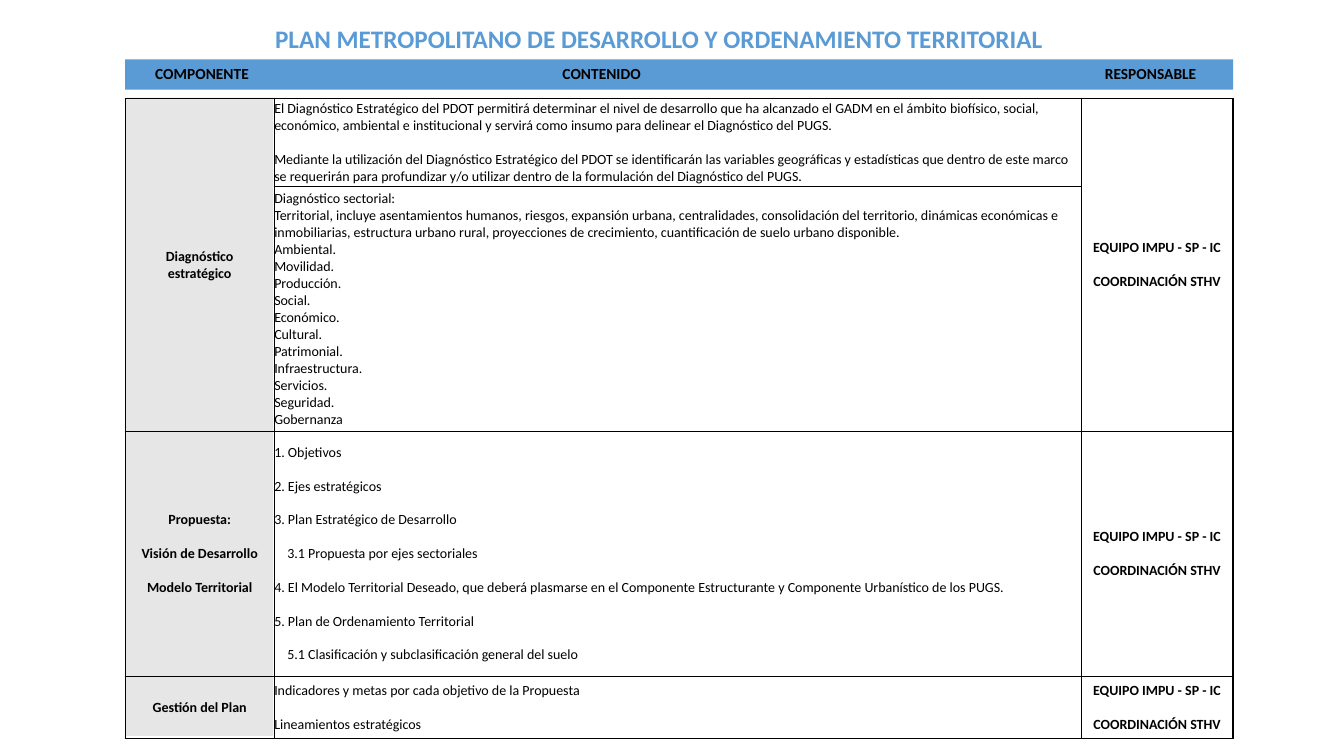
from lxml.etree import SubElement
from pptx import Presentation
from pptx.dml.color import RGBColor
from pptx.enum.shapes import MSO_SHAPE
from pptx.enum.text import MSO_ANCHOR, MSO_AUTO_SIZE, PP_ALIGN
from pptx.oxml.ns import qn
from pptx.util import Inches, Pt

BLUE, GREY, BLACK = "5B9BD5", "E7E6E6", "000000"
LEFT, WIDTH = 1.24, 10.99
COLUMN_WIDTHS = [1.48, 8, 1.51]
ROW_HEIGHTS = [0.87, 2.43, 2.43, 0.62]
HEADINGS = {"COMPONENTE": 0.2, "CONTENIDO": 4.24, "RESPONSABLE": 9.62}
GAP = 12

COMPONENTS = {
    0: (["Diagnóstico", "estratégico"], 0),
    2: (["Propuesta:", "Visión de Desarrollo", "Modelo Territorial"], GAP),
    3: (["Gestión del Plan"], 0),
}
CONTENTS = [
    ([
        "El Diagnóstico Estratégico del PDOT permitirá determinar el nivel de desarrollo que ha "
        "alcanzado el GADM en el ámbito biofísico, social, económico, ambiental e institucional "
        "y servirá como insumo para delinear el Diagnóstico del PUGS.",
        "Mediante la utilización del Diagnóstico Estratégico del PDOT se identificarán las "
        "variables geográficas y estadísticas que dentro de este marco se requerirán para "
        "profundizar y/o utilizar dentro de la formulación del Diagnóstico del PUGS.",
    ], GAP),
    ([
        "Diagnóstico sectorial:",
        "Territorial, incluye asentamientos humanos, riesgos, expansión urbana, centralidades, "
        "consolidación del territorio, dinámicas económicas e inmobiliarias, estructura urbano "
        "rural, proyecciones de crecimiento, cuantificación de suelo urbano disponible.",
        "Ambiental.", "Movilidad.", "Producción.", "Social.", "Económico.", "Cultural.",
        "Patrimonial.", "Infraestructura.", "Servicios.", "Seguridad.", "Gobernanza",
    ], 0),
    ([
        "1. Objetivos",
        "2. Ejes estratégicos",
        "3. Plan Estratégico de Desarrollo",
        "3.1 Propuesta por ejes sectoriales",
        "4. El Modelo Territorial Deseado, que deberá plasmarse en el Componente Estructurante "
        "y Componente Urbanístico de los PUGS.",
        "5. Plan de Ordenamiento Territorial",
        "5.1 Clasificación y subclasificación general del suelo",
    ], GAP),
    ([
        "Indicadores y metas por cada objetivo de la Propuesta",
        "Lineamientos estratégicos",
    ], GAP),
]
RESPONSIBLE = ["EQUIPO IMPU - SP - IC", "COORDINACIÓN STHV"]


def rgb(color):
    """Turn a hex string into a colour."""
    return RGBColor.from_string(color)


def format_paragraph(paragraph, size, color, bold, align):
    """Align a paragraph and set the font of its runs."""
    paragraph.alignment = align
    for run in paragraph.runs:
        run.font.name = "Calibri"
        run.font.size = Pt(size)
        run.font.bold = bold
        run.font.color.rgb = rgb(color)


def add_band(slide, top, width, height, color):
    """Add a plain filled rectangle at the table's left edge."""
    band = slide.shapes.add_shape(
        MSO_SHAPE.RECTANGLE, Inches(LEFT), Inches(top), Inches(width), Inches(height))
    band.shadow.inherit = False
    band.fill.solid()
    band.fill.fore_color.rgb = rgb(color)
    band.line.fill.background()


def add_title(slide, text):
    """Place and format the slide title."""
    title = slide.shapes.title
    title.left, title.top = Inches(1.54), Inches(0.18)
    title.width, title.height = Inches(9.99), Inches(0.4)
    frame = title.text_frame
    frame.text = text
    frame.auto_size = MSO_AUTO_SIZE.NONE
    format_paragraph(frame.paragraphs[0], 18, BLUE, True, PP_ALIGN.CENTER)


def add_headings(slide):
    """Write the column headings on one line with tab stops."""
    box = slide.shapes.add_textbox(Inches(LEFT), Inches(0.59), Inches(WIDTH), Inches(0.29))
    frame = box.text_frame
    frame.word_wrap = True
    frame.text = "".join("\t" + heading for heading in HEADINGS)
    paragraph = frame.paragraphs[0]
    format_paragraph(paragraph, 11, BLACK, True, PP_ALIGN.LEFT)
    stops = SubElement(paragraph._p.get_or_add_pPr(), qn("a:tabLst"))
    for position in HEADINGS.values():
        SubElement(stops, qn("a:tab"), pos=str(Inches(position)), algn="l")


def set_borders(cell, row, column):
    """Draw thin cell borders, thicker on the table's outer edges."""
    outer = {"L": False, "R": column == len(COLUMN_WIDTHS) - 1,
             "T": row == 0, "B": row == len(ROW_HEIGHTS) - 1}
    properties = cell._tc.get_or_add_tcPr()
    for side, is_outer in outer.items():
        line = SubElement(properties, qn("a:ln" + side), w=str(Pt(1 if is_outer else 0.5)))
        fill = SubElement(line, qn("a:solidFill"))
        SubElement(fill, qn("a:srgbClr"), val=BLACK)


def fill_cell(cell, lines, gap, bold, align):
    """Write one paragraph per line, indenting the numbered subsections."""
    frame = cell.text_frame
    frame.text = "\n".join(lines)
    for index, paragraph in enumerate(frame.paragraphs):
        format_paragraph(paragraph, 10, BLACK, bold, align)
        paragraph.space_before = Pt(gap if index else 0)
        if paragraph.text.startswith(("3.1", "5.1")):
            paragraph._p.get_or_add_pPr().set("marL", str(Inches(0.13)))


def add_plan_table(slide):
    """Add the table of components, contents and responsible teams."""
    table = slide.shapes.add_table(
        len(ROW_HEIGHTS), len(COLUMN_WIDTHS), Inches(LEFT), Inches(0.98),
        Inches(WIDTH), Inches(sum(ROW_HEIGHTS))).table
    table.first_row = table.horz_banding = False
    for column, width in zip(table.columns, COLUMN_WIDTHS):
        column.width = Inches(width)
    for row, height in zip(table.rows, ROW_HEIGHTS):
        row.height = Inches(height)
    for row in range(len(ROW_HEIGHTS)):
        for column in range(len(COLUMN_WIDTHS)):
            cell = table.cell(row, column)
            set_borders(cell, row, column)
            cell.fill.background()
            cell.vertical_anchor = MSO_ANCHOR.MIDDLE
            cell.margin_left = cell.margin_right = cell.margin_top = cell.margin_bottom = 0
    for column in (0, 2):
        table.cell(0, column).merge(table.cell(1, column))
    for row, (lines, gap) in enumerate(CONTENTS):
        fill_cell(table.cell(row, 1), lines, gap, False, PP_ALIGN.LEFT)
    for row, (lines, gap) in COMPONENTS.items():
        fill_cell(table.cell(row, 0), lines, gap, True, PP_ALIGN.CENTER)
        fill_cell(table.cell(row, 2), RESPONSIBLE, GAP, True, PP_ALIGN.CENTER)


def main():
    """Build the slide and save it."""
    deck = Presentation()
    deck.slide_width, deck.slide_height = Inches(13.33), Inches(7.5)
    slide = deck.slides.add_slide(deck.slide_layouts[5])
    add_title(slide, "PLAN METROPOLITANO DE DESARROLLO Y ORDENAMIENTO TERRITORIAL")
    add_band(slide, 0.97, 1.47, 6.33, GREY)
    add_band(slide, 0.59, WIDTH, 0.3, BLUE)
    add_plan_table(slide)
    add_headings(slide)
    deck.save("out.pptx")


if __name__ == "__main__":
    main()
